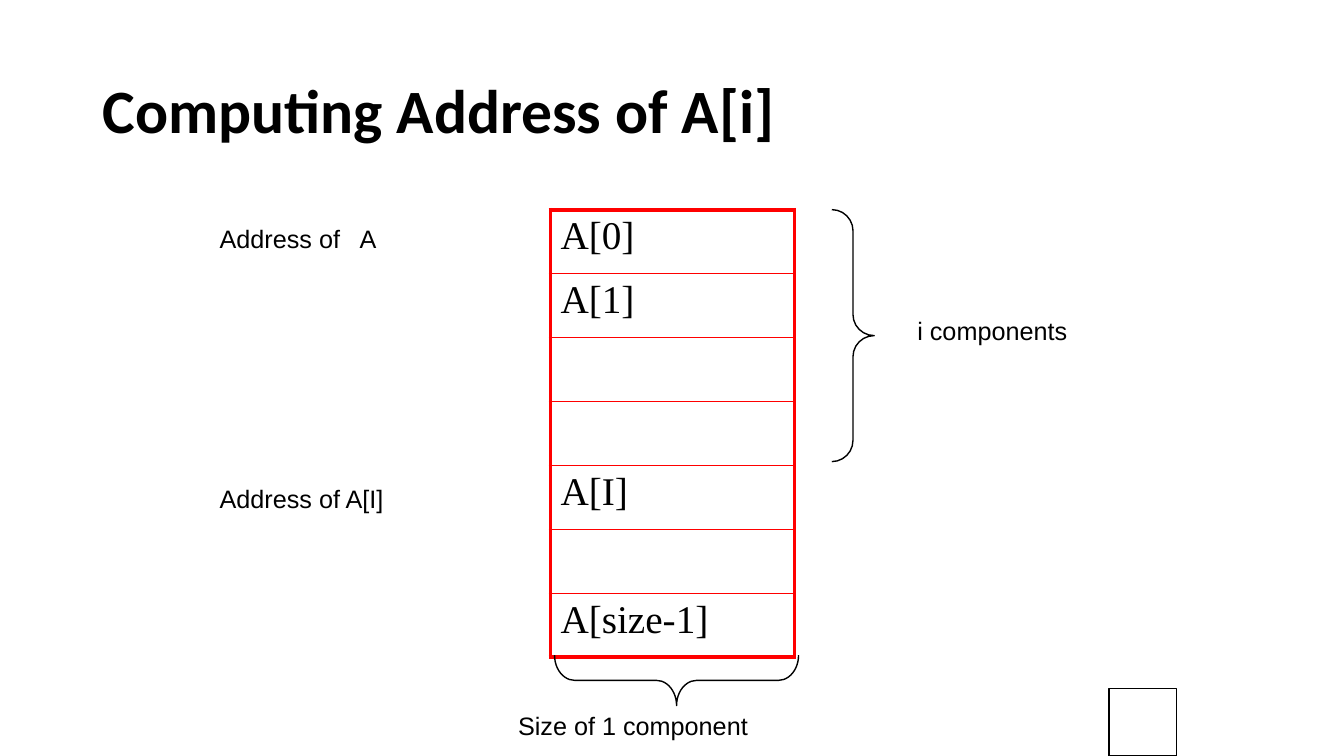
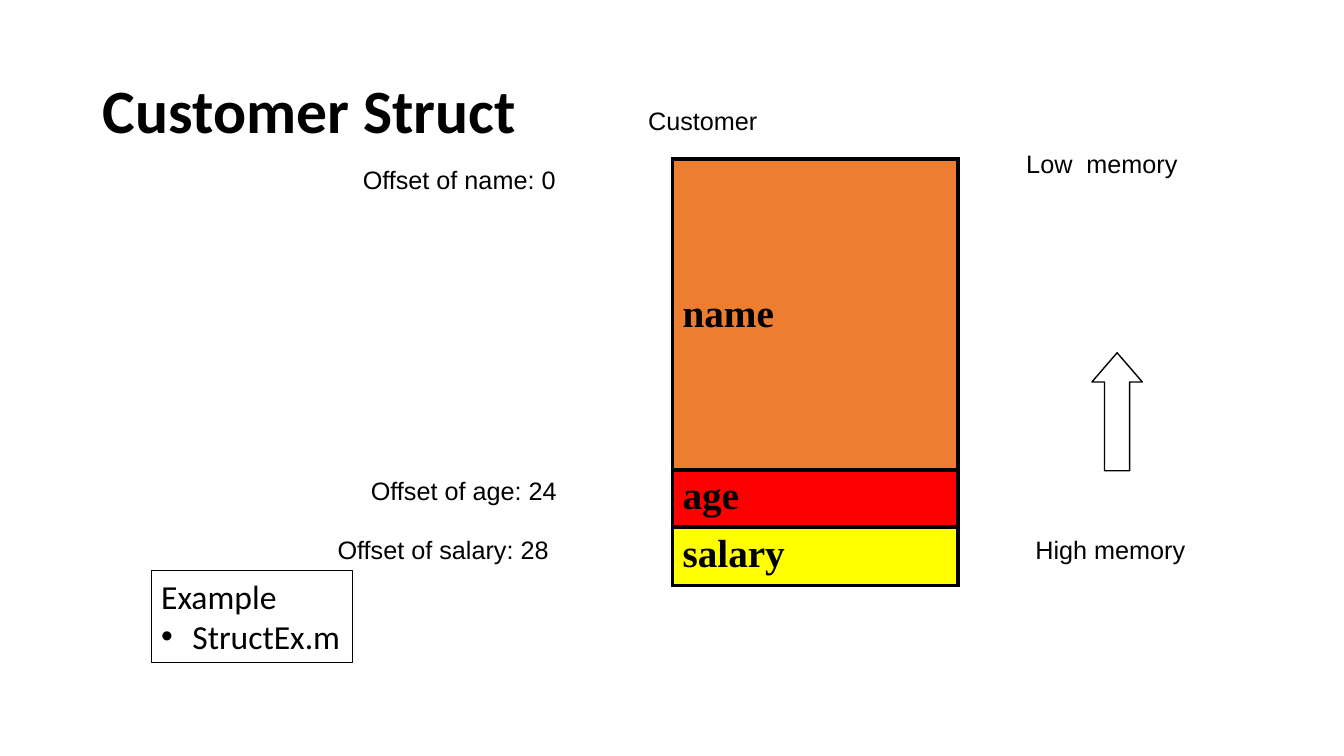
from dataclasses import dataclass

from lxml.etree import SubElement
from pptx import Presentation
from pptx.dml.color import RGBColor
from pptx.enum.shapes import MSO_SHAPE as Shape
from pptx.enum.text import MSO_ANCHOR as Anchor, MSO_AUTO_SIZE as AutoSize, PP_ALIGN as Align
from pptx.oxml import parse_xml
from pptx.oxml.ns import nsdecls, qn
from pptx.util import Emu, Pt


@dataclass(frozen=True)
class Theme:
    black: str = "000000"
    white: str = "FFFFFF"
    red: str = "FF0000"
    orange: str = "ED7D31"
    yellow: str = "FFFF00"
    title_font: str = "Calibri"
    label_font: str = "Arial"
    cell_font: str = "Times New Roman"
    title_size: int = 44
    cell_size: int = 28
    note_size: int = 24
    label_size: int = 18


T = Theme()
TITLE_BOX = (92, 40, 1150, 145)


def px(n):
    """100 px to the inch."""
    return Emu(n * 9144)


def place(box):
    return [px(n) for n in box]


def put(obj, **values):
    for name, value in values.items():
        setattr(obj, name, value)


def write(p, text, font, size, bold=False):
    r = p.add_run()
    r.text = text
    put(r.font, name=font, size=Pt(size), bold=bold)
    r.font.color.rgb = RGBColor.from_string(T.black)


# Shared parts

def add_titled_slide(prs, text):
    s = prs.slides.add_slide(prs.slide_layouts[5])
    title = s.shapes.title
    left, top, width, height = place(TITLE_BOX)
    put(title, left=left, top=top, width=width, height=height)
    tf = title.text_frame
    put(tf, word_wrap=True, auto_size=AutoSize.NONE, vertical_anchor=Anchor.MIDDLE)
    p = tf.paragraphs[0]
    put(p, alignment=Align.LEFT, line_spacing=0.9)
    write(p, text, T.title_font, T.title_size, bold=True)
    return s


def add_label(s, text, left, top, width, wrap=True):
    tf = s.shapes.add_textbox(*place((left, top, width, 40))).text_frame
    put(tf, word_wrap=wrap, auto_size=AutoSize.SHAPE_TO_FIT_TEXT)
    write(tf.paragraphs[0], text, T.label_font, T.label_size)


def add_outline(s, kind, box, adjust=(), fill=None, weight=1, rotation=0):
    sp = s.shapes.add_shape(kind, *place(box))
    sp.shadow.inherit = False
    sp.rotation = rotation
    for i, value in enumerate(adjust):
        sp.adjustments[i] = value
    if fill:
        sp.fill.solid()
        sp.fill.fore_color.rgb = RGBColor.from_string(fill)
    else:
        sp.fill.background()
    sp.line.color.rgb = RGBColor.from_string(T.black)
    sp.line.width = Pt(weight)
    return sp


def set_borders(cell, color, **weights):
    tc_pr = cell._tc.get_or_add_tcPr()
    for i, side in enumerate("LRTB"):
        tc_pr.insert(i, parse_xml(
            f'<a:ln{side} {nsdecls("a")} w="{Pt(weights[side])}"><a:solidFill>'
            f'<a:srgbClr val="{color}"/></a:solidFill></a:ln{side}>'))


def add_memory(s, box, rows, line, inner, bold=False):
    """One column of memory; rows hold (text, height, fill, anchor)."""
    table = s.shapes.add_table(len(rows), 1, *place(box)).table
    put(table, first_row=False, horz_banding=False)
    last = len(rows) - 1
    for i, (text, height, fill, anchor) in enumerate(rows):
        table.rows[i].height = height
        cell = table.cell(i, 0)
        cell.vertical_anchor = anchor
        if fill:
            cell.fill.solid()
            cell.fill.fore_color.rgb = RGBColor.from_string(fill)
        else:
            cell.fill.background()
        if text:
            write(cell.text_frame.paragraphs[0], text, T.cell_font, T.cell_size, bold)
        set_borders(cell, line, L=3, R=3,
                    T=inner if i else 3, B=inner if i < last else 3)


def add_example(s, box, heading, item):
    sp = add_outline(s, Shape.RECTANGLE, box, weight=0.75)
    tf = sp.text_frame
    put(tf, word_wrap=False, auto_size=AutoSize.SHAPE_TO_FIT_TEXT,
        vertical_anchor=Anchor.TOP)
    for p, text in ((tf.paragraphs[0], heading), (tf.add_paragraph(), item)):
        p.alignment = Align.LEFT
        write(p, text, T.title_font, T.note_size)
    # Bullet on the last paragraph
    p_pr = p._p.get_or_add_pPr()
    p_pr.set("marL", str(px(31)))
    p_pr.set("indent", str(-px(31)))
    SubElement(p_pr, qn("a:buFont")).set("typeface", T.label_font)
    SubElement(p_pr, qn("a:buChar")).set("char", "•")


# Slides

def build_array_slide(prs):
    s = add_titled_slide(prs, "Computing Address of A[i]")
    left, top, width, height = box = (546, 208, 242, 444)
    names = ["A[0]", "A[1]", "", "", "A[I]", "", "A[size-1]"]
    row = px(height) // len(names)
    add_memory(s, box, [(name, row, None, Anchor.TOP) for name in names], T.red, inner=1)
    add_label(s, "Address of   A", 208, top + 9, 325)
    add_label(s, "Address of A[I]", 208, top + 267, 308)

    # Braces: components before A[i], and the size of one
    add_outline(s, Shape.RIGHT_BRACE, (825, top, 42, 250), (0.5, 0.5))
    add_label(s, "i components", 900, top + 100, 170, wrap=False)
    add_outline(s, Shape.RIGHT_BRACE, (646, 554, 50, width), (0.4, 0.5), rotation=90)
    add_label(s, "Size of 1 component", left - 42, 700, 325)
    add_outline(s, Shape.ACTION_BUTTON_CUSTOM, (1100, 683, 67, 67), fill=T.white)


def build_struct_slide(prs):
    s = add_titled_slide(prs, "Customer Struct")
    fields = [("name", px(308), T.orange, Anchor.MIDDLE),
              ("age", px(57), T.red, Anchor.TOP),
              ("salary", px(58), T.yellow, Anchor.TOP)]
    add_memory(s, (667, 158, 283, 423), fields, T.black, inner=3, bold=True)
    add_label(s, "Customer", 633, 100, 189)

    # Field offsets
    for text, left, top, width in (("Offset of name: 0", 350, 158, 213),
                                   ("Offset of age: 24", 358, 467, 206),
                                   ("Offset of salary: 28", 325, 525, 232)):
        add_label(s, text, left, top, width, wrap=False)

    # Direction of memory
    add_outline(s, Shape.UP_ARROW, (1083, 350, 50, 117), (0.5, 0.58), fill=T.white)
    add_label(s, "High memory", 1017, 525, 225)
    add_label(s, "Low  memory", 1008, 142, 225)
    add_example(s, (150, 566, 200, 91), "Example", "StructEx.m")


def main():
    prs = Presentation()
    put(prs, slide_width=px(1333), slide_height=px(750))
    build_array_slide(prs)
    build_struct_slide(prs)
    prs.save("out.pptx")


if __name__ == "__main__":
    main()
